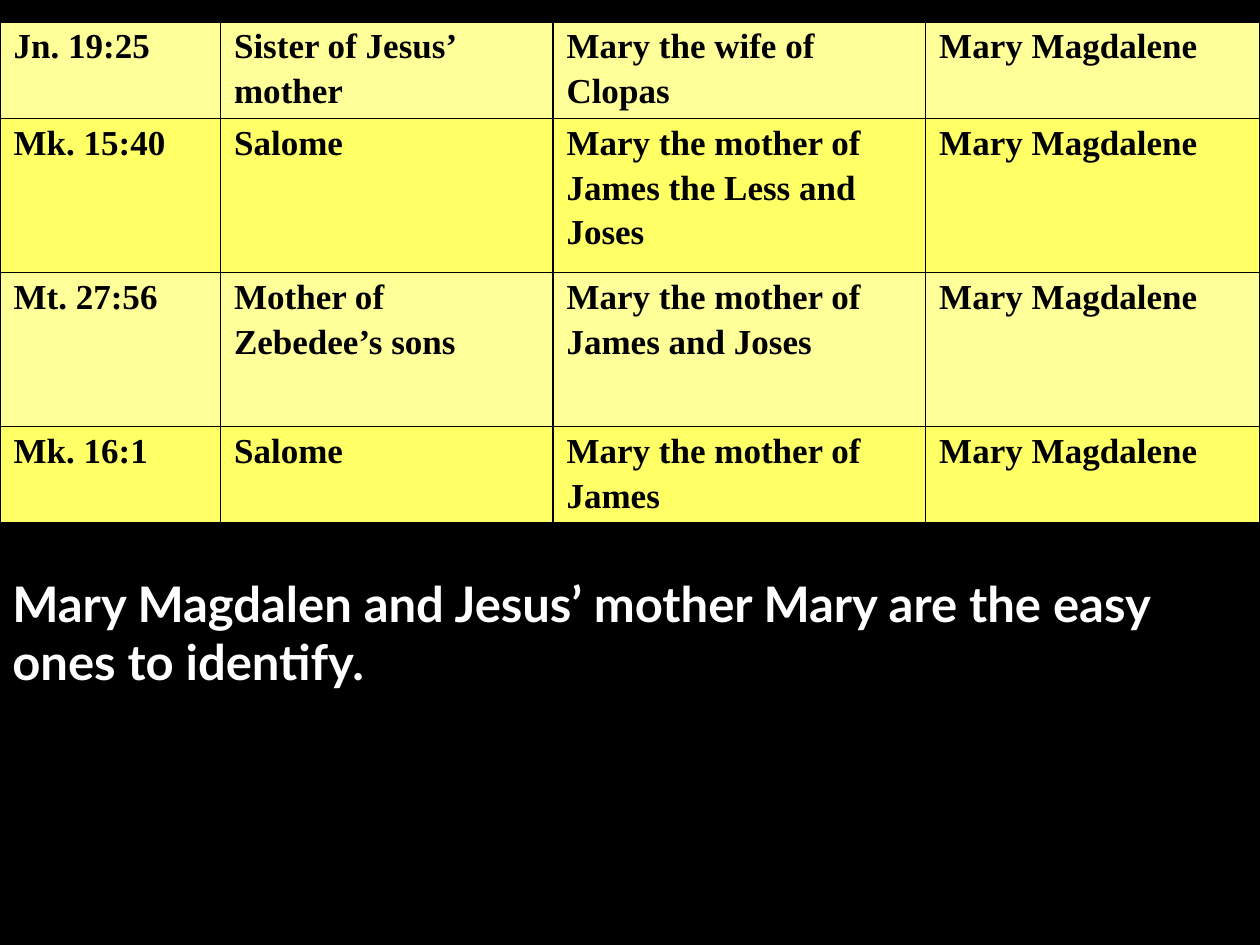
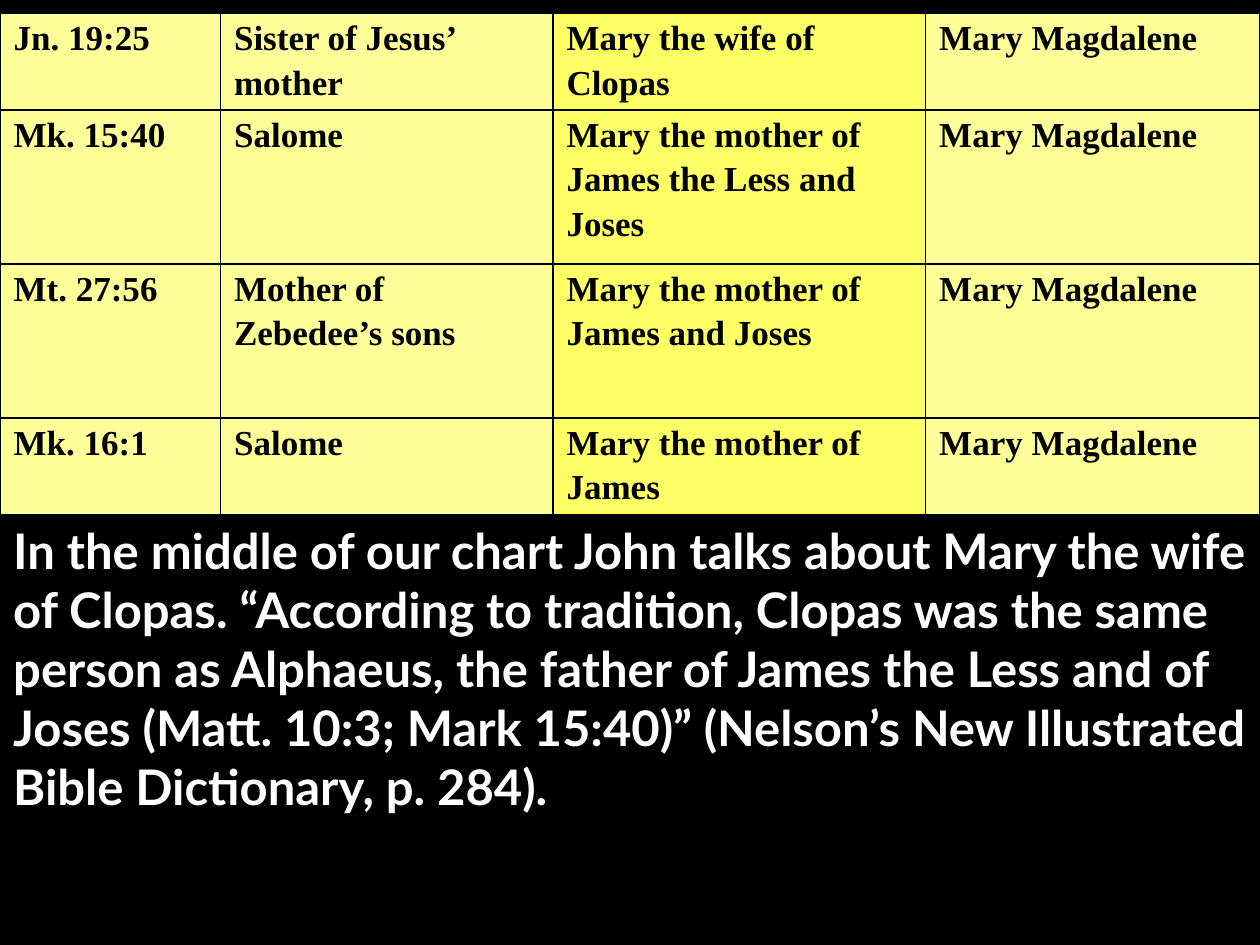
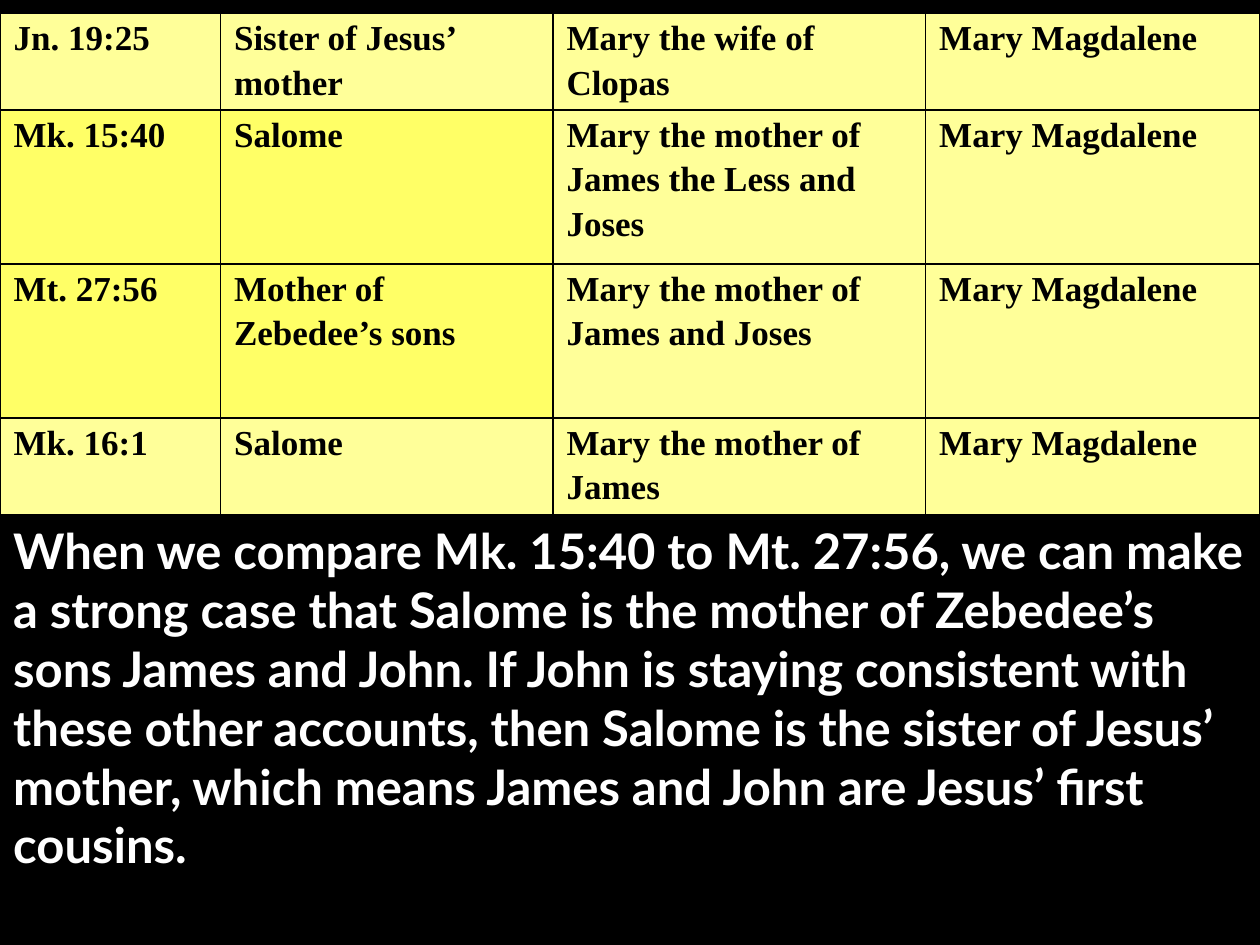
from dataclasses import dataclass
from itertools import product

from lxml.etree import SubElement
from pptx import Presentation
from pptx.dml.color import RGBColor
from pptx.enum.text import MSO_AUTO_SIZE
from pptx.oxml.ns import qn
from pptx.util import Pt

# Content: the same accounts appear on every slide
ACCOUNTS = [
    ("Jn. 19:25", "Sister of Jesus’ mother", "Mary the wife of Clopas", "Mary Magdalene"),
    ("Mk. 15:40", "Salome", "Mary the mother of James the Less and Joses", "Mary Magdalene"),
    ("Mt. 27:56", "Mother of Zebedee’s sons", "Mary the mother of James and Joses", "Mary Magdalene"),
    ("Mk. 16:1", "Salome", "Mary the mother of James", "Mary Magdalene"),
]

# Each slide: accounts top, remark box (left, top, height), stressed (row, column) cells, remark
SLIDES = [
    {
        "accounts_top": 12.5,
        "remark_box": (0, 324, 75),
        "stressed": set(product((1, 3), range(4))),
        "remark": "Mary Magdalen and Jesus’ mother Mary are the easy ones to identify.",
    },
    {
        "accounts_top": 7.75,
        "remark_box": (0.5, 294, 211),
        "stressed": set(product(range(4), (2,))),
        "remark": "In the middle of our chart John talks about Mary the wife of Clopas. "
                  "“According to tradition, Clopas was the same person as Alphaeus, the father "
                  "of James the Less and of Joses (Matt. 10:3; Mark 15:40)” (Nelson’s New "
                  "Illustrated Bible Dictionary, p. 284).",
    },
    {
        "accounts_top": 7.75,
        "remark_box": (0.5, 294, 211),
        "stressed": set(product((1, 2), (0, 1))),
        "remark": "When we compare Mk. 15:40 to Mt. 27:56, we can make a strong case that "
                  "Salome is the mother of Zebedee’s sons James and John. If John is staying "
                  "consistent with these other accounts, then Salome is the sister of Jesus’ "
                  "mother, which means James and John are Jesus’ first cousins.",
    },
]

# Layout in points
WIDTH, HEIGHT = 720, 540
COLUMN_WIDTHS = (126, 190, 213, 191)
ROW_HEIGHTS = (44, 88, 88, 44)
ACCOUNTS_HEIGHT = 286.5
CELL_INSET = 7.75


@dataclass(frozen=True)
class Theme:
    background: str = "000000"
    remark: str = "FFFFFF"
    ink: str = "000000"
    plain: str = "FFFF99"
    stressed: str = "FFFF66"
    remark_font: str = "Lato"
    cell_font: str = "Times New Roman"
    remark_size: int = 28
    cell_size: int = 20
    cell_spacing: float = 1.15
    border: int = 1


THEME = Theme()


def add_bold_run(paragraph, text, font, size, color):
    run = paragraph.add_run()
    run.text = text
    run.font.name = font
    run.font.size = Pt(size)
    run.font.bold = True
    run.font.color.rgb = RGBColor.from_string(color)


def add_borders(cell):
    properties = cell._tc.get_or_add_tcPr()
    for side in ("a:lnL", "a:lnR", "a:lnT", "a:lnB"):
        line = SubElement(properties, qn(side), w=str(Pt(THEME.border)))
        fill = SubElement(line, qn("a:solidFill"))
        SubElement(fill, qn("a:srgbClr"), val=THEME.ink)


def add_remark(slide, text, left, top, height):
    remark = slide.shapes.add_textbox(Pt(left), Pt(top), Pt(WIDTH), Pt(height)).text_frame
    remark.word_wrap = True
    remark.auto_size = MSO_AUTO_SIZE.SHAPE_TO_FIT_TEXT
    add_bold_run(remark.paragraphs[0], text, THEME.remark_font, THEME.remark_size, THEME.remark)


def fill_cell(cell, text, color):
    cell.margin_left = cell.margin_right = Pt(CELL_INSET)
    cell.margin_top = cell.margin_bottom = 0
    add_borders(cell)
    cell.fill.solid()
    cell.fill.fore_color.rgb = RGBColor.from_string(color)
    paragraph = cell.text_frame.paragraphs[0]
    paragraph.line_spacing = THEME.cell_spacing
    add_bold_run(paragraph, text, THEME.cell_font, THEME.cell_size, THEME.ink)


def add_accounts(slide, top, stressed):
    frame = slide.shapes.add_table(len(ACCOUNTS), len(COLUMN_WIDTHS),
                                   0, Pt(top), Pt(WIDTH), Pt(ACCOUNTS_HEIGHT))
    accounts = frame.table
    accounts.first_row = accounts.horz_banding = False
    for column, width in zip(accounts.columns, COLUMN_WIDTHS):
        column.width = Pt(width)
    for row, height in zip(accounts.rows, ROW_HEIGHTS):
        row.height = Pt(height)
    # The frame is taller than its rows, so the short rows stretch
    frame.height = Pt(ACCOUNTS_HEIGHT)
    for r, account in enumerate(ACCOUNTS):
        for c, text in enumerate(account):
            color = THEME.stressed if (r, c) in stressed else THEME.plain
            fill_cell(accounts.cell(r, c), text, color)


def main():
    deck = Presentation()
    deck.slide_width, deck.slide_height = Pt(WIDTH), Pt(HEIGHT)
    for content in SLIDES:
        slide = deck.slides.add_slide(deck.slide_layouts[6])
        slide.background.fill.solid()
        slide.background.fill.fore_color.rgb = RGBColor.from_string(THEME.background)
        add_remark(slide, content["remark"], *content["remark_box"])
        add_accounts(slide, content["accounts_top"], content["stressed"])
    deck.save("out.pptx")


if __name__ == "__main__":
    main()
